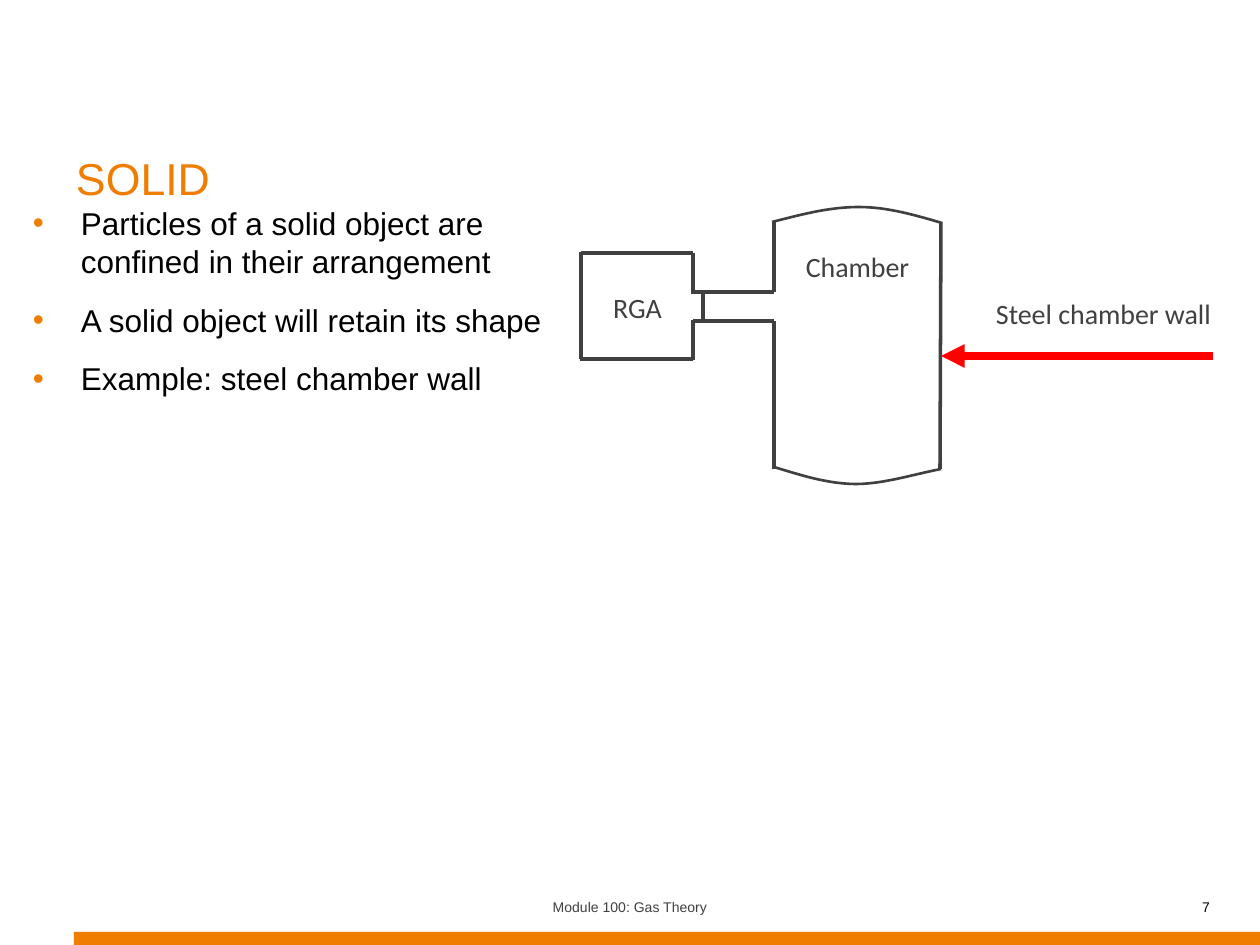
from lxml.etree import SubElement
from pptx import Presentation
from pptx.dml.color import RGBColor
from pptx.enum.shapes import MSO_CONNECTOR as Connector, MSO_SHAPE as Shape
from pptx.enum.text import MSO_ANCHOR as Anchor, PP_ALIGN as Align
from pptx.oxml.ns import qn
from pptx.util import Pt

SCALE = 914400 / 126
ORANGE, GREY, BLACK, RED = "EF7D00", "404040", "000000", "FF0000"
BULLETS = [
    "Particles of a solid object are confined in their arrangement",
    "A solid object will retain its shape",
    "Example: steel chamber wall",
]
RGA_LINES = [(1, 45, 1, 152), (0, 152, 113, 152), (113, 153, 113, 113),
             (113, 87, 113, 46), (1, 46, 113, 46)]
NECK_LINES = [(113, 85, 194, 85), (113, 114, 194, 114), (123, 114, 123, 85)]
CHAMBER_LINES = [(194, 114, 194, 262), (360, 262, 361, 15), (194, 85, 194, 15)]
CHAMBER_TOP = [(362, 16), (335, 8), (307, 0), (279, 0), (250, 0), (223, 7), (192, 15)]
CHAMBER_BOTTOM = [(194, 260), (220, 268), (248, 277), (276, 277),
                  (303, 277), (331, 268), (361, 262)]


def px(length):
    """Turn pixels into EMU."""
    return round(length * SCALE)


def color(value):
    """Turn a hex string into a colour."""
    return RGBColor.from_string(value)


def apply(target, **values):
    """Set attributes from format values."""
    for name, value in values.items():
        setattr(target, name, value)


def place(shape, box):
    """Move a shape to a pixel box."""
    apply(shape, **dict(zip(("left", "top", "width", "height"), map(px, box))))


def format_frame(frame, side=13, bottom=6, anchor=Anchor.TOP):
    """Set wrapping, insets and anchor of a text frame."""
    apply(frame, word_wrap=True, vertical_anchor=anchor, margin_left=px(side),
          margin_right=px(side), margin_top=px(6), margin_bottom=px(bottom))


def format_para(para, size, name, ink, align=Align.LEFT, after=0):
    """Set font, alignment and spacing of a paragraph."""
    apply(para, alignment=align, space_before=Pt(0), space_after=Pt(after))
    apply(para.font, size=Pt(size), name=name)
    para.font.color.rgb = color(ink)


def add_text(page, box, text, size, name, ink, align, side=13, anchor=Anchor.TOP):
    """Add a label of one paragraph."""
    frame = page.shapes.add_textbox(*map(px, box)).text_frame
    format_frame(frame, side, anchor=anchor)
    para = frame.paragraphs[0]
    para.text = text
    format_para(para, size, name, ink, align)


def add_line(page, origin, ends, ink=GREY, width=2, arrow=False):
    """Add a straight line relative to an origin."""
    left, top = origin
    x1, y1, x2, y2 = ends
    line = page.shapes.add_connector(
        Connector.STRAIGHT, px(left + x1), px(top + y1), px(left + x2), px(top + y2))
    line.line.color.rgb = color(ink)
    line.line.width = Pt(width)
    if arrow:
        SubElement(line.line._get_or_add_ln(), qn("a:tailEnd"), type="triangle")
    SubElement(line._element.spPr, qn("a:effectLst"))


def curve_points(knots, steps=12):
    """Sample a chain of cubic curves."""
    points = [knots[0]]
    for start in range(0, len(knots) - 1, 3):
        segment = knots[start:start + 4]
        for step in range(1, steps + 1):
            t = step / steps
            weights = ((1 - t) ** 3, 3 * t * (1 - t) ** 2, 3 * t * t * (1 - t), t ** 3)
            points.append(tuple(sum(w * knot[axis] for w, knot in zip(weights, segment))
                                for axis in (0, 1)))
    return points


def add_curve(page, origin, knots):
    """Add an open curved outline relative to an origin."""
    points = [(px(origin[0] + x), px(origin[1] + y)) for x, y in curve_points(knots)]
    builder = page.shapes.build_freeform(*points[0])
    builder.add_line_segments(points[1:], close=False)
    curve = builder.convert_to_shape()
    curve.shadow.inherit = False
    curve.fill.background()
    curve.line.color.rgb = color(GREY)
    curve.line.width = Pt(1.5)


def add_title(page, box):
    """Fill the title placeholder."""
    title = page.shapes.title
    place(title, box)
    format_frame(title.text_frame, bottom=0, anchor=Anchor.BOTTOM)
    para = title.text_frame.paragraphs[0]
    para.text = "SOLID"
    format_para(para, 25.5, "Arial", ORANGE)


def add_bullets(page, box):
    """Add the bulleted list."""
    frame = page.shapes.add_textbox(*map(px, box)).text_frame
    format_frame(frame, side=0)
    for index, text in enumerate(BULLETS):
        para = frame.paragraphs[0] if index == 0 else frame.add_paragraph()
        para.text = text
        props = para._p.get_or_add_pPr()
        props.set("marL", str(px(48)))
        props.set("indent", str(-px(48)))
        SubElement(SubElement(props, qn("a:buClr")), qn("a:srgbClr"), val=ORANGE)
        SubElement(props, qn("a:buFont"), typeface="Arial")
        SubElement(props, qn("a:buChar"), char="•")
        format_para(para, 18, "Arial", BLACK, after=12)


def add_diagram(page, origin):
    """Draw the analyser, the chamber and the wall arrow."""
    left, top = origin
    for ends in RGA_LINES + NECK_LINES + CHAMBER_LINES:
        add_line(page, origin, ends)
    for knots in (CHAMBER_TOP, CHAMBER_BOTTOM):
        add_curve(page, origin, knots)
    labels = [("RGA", (3, 78, 109, 47)), ("Chamber", (194, 36, 167, 47)),
              ("Steel chamber wall", (395, 84, 257, 53))]
    for text, (x, y, width, height) in labels:
        add_text(page, (left + x, top + y, width, height), text,
                 16, "Calibri", GREY, Align.CENTER)
    add_line(page, origin, (633, 149, 361, 149), RED, 4.5, arrow=True)


def add_footer(page, box):
    """Add the bar, module name and page number."""
    left, top, width, height = box
    bar = page.shapes.add_shape(
        Shape.RECTANGLE, *map(px, (left + 74, top + 50, width - 74, height - 50)))
    bar.shadow.inherit = False
    bar.fill.solid()
    bar.fill.fore_color.rgb = color(ORANGE)
    bar.line.fill.background()
    add_text(page, (left + 430, top, 400, 50), "Module 100: Gas Theory",
             8, "Arial", GREY, Align.CENTER, anchor=Anchor.MIDDLE)
    add_text(page, (left + 916, top, 294, 50), "7",
             8, "Arial", BLACK, Align.RIGHT, side=0, anchor=Anchor.MIDDLE)


def main():
    """Build and save the deck."""
    deck = Presentation()
    apply(deck, slide_width=px(1260), slide_height=px(945))
    page = deck.slides.add_slide(deck.slide_layouts[5])
    add_footer(page, (0, 882, 1260, 63))
    add_title(page, (63, 46, 1134, 158))
    add_bullets(page, (33, 198, 556, 605))
    add_diagram(page, (580, 207))
    deck.save("out.pptx")


if __name__ == "__main__":
    main()
